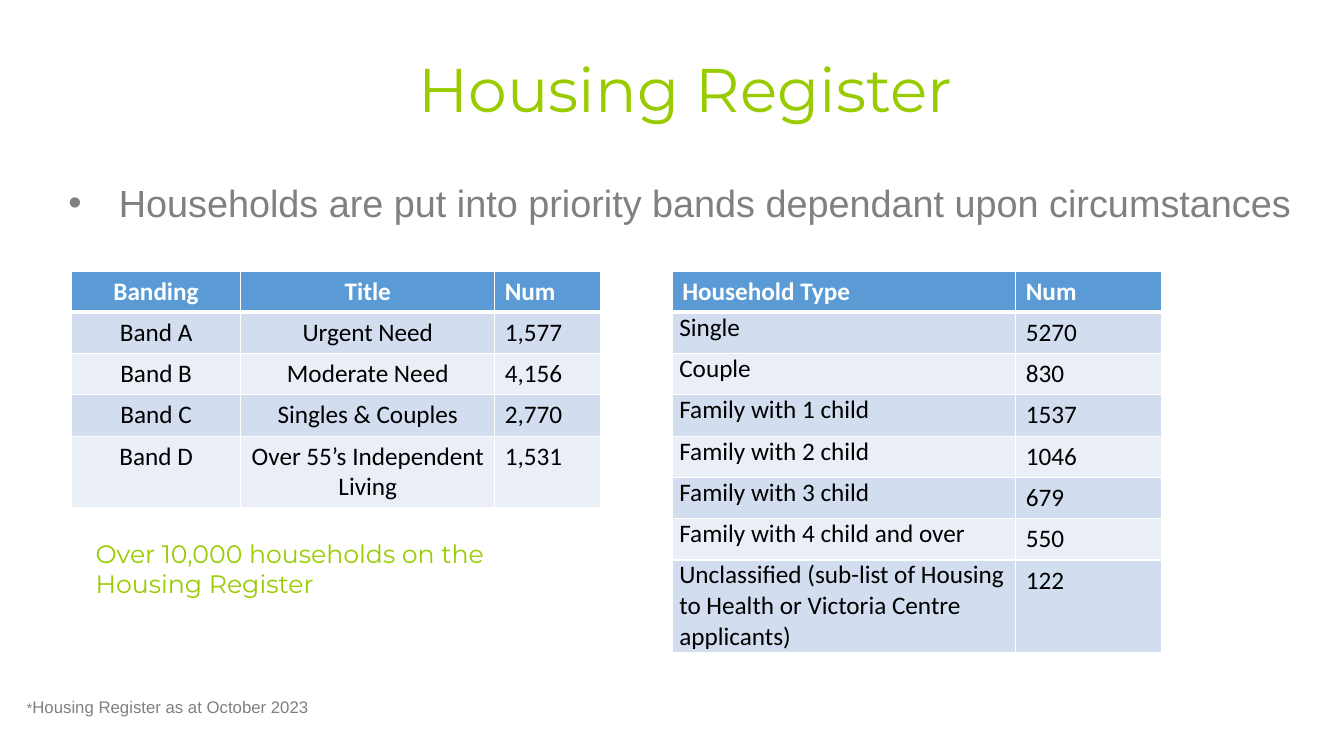
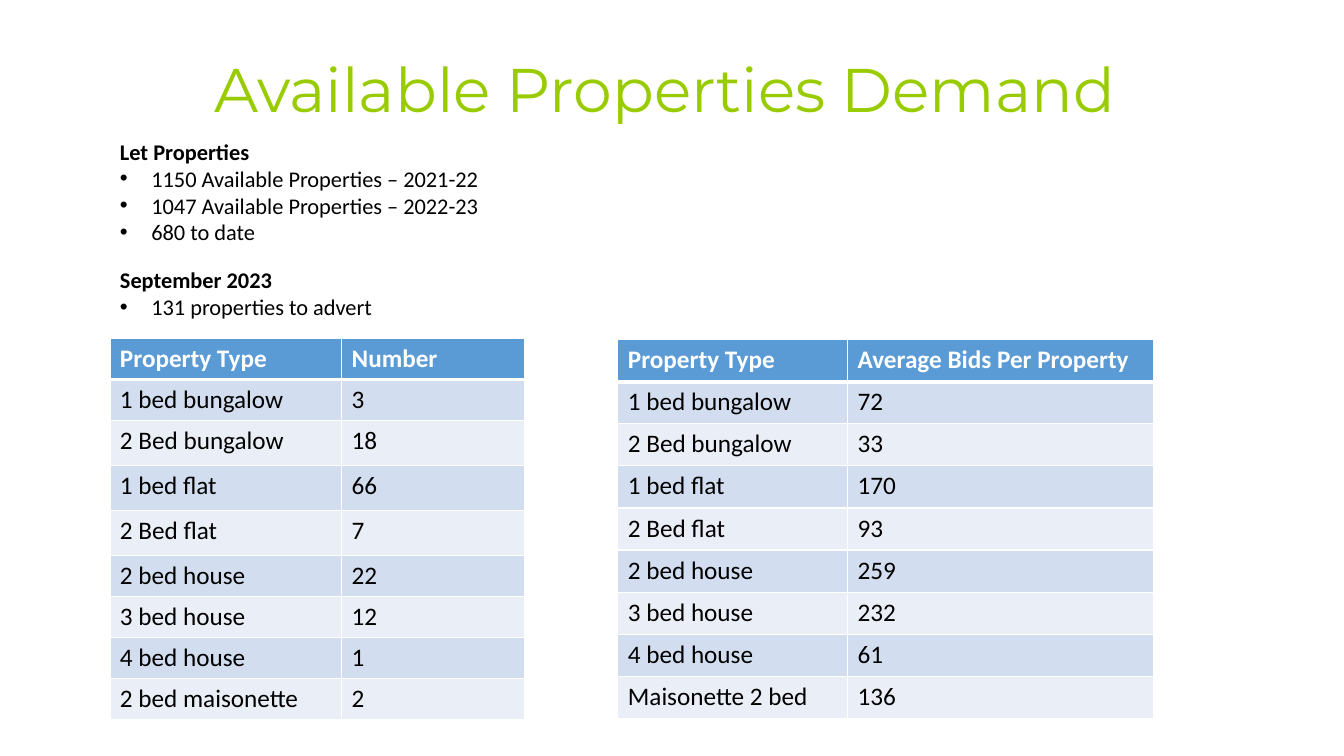
import dataclasses
import typing

import lxml.etree
import pptx
import pptx.dml.color
import pptx.enum.text
import pptx.oxml.ns
import pptx.presentation
import pptx.slide
import pptx.table
import pptx.text.text
import pptx.util

Cm = pptx.util.Cm
Pt = pptx.util.Pt
qn = pptx.oxml.ns.qn
ALIGN = pptx.enum.text.PP_ALIGN
ANCHOR = pptx.enum.text.MSO_ANCHOR
AUTO_SIZE = pptx.enum.text.MSO_AUTO_SIZE


@dataclasses.dataclass(frozen=True)
class TextStyle:
    font: str
    size: float
    color: str
    bold: bool = False


@dataclasses.dataclass(frozen=True)
class Theme:
    title: TextStyle = TextStyle("Montserrat", 44, "99CC00")
    callout: TextStyle = TextStyle("Montserrat", 18, "99CC00")
    lead: TextStyle = TextStyle("Arial", 27, "808080")
    footnote_mark: TextStyle = TextStyle("Arial", 10, "808080")
    footnote: TextStyle = TextStyle("Arial", 12, "808080")
    list_heading: TextStyle = TextStyle("Calibri", 16, "000000", True)
    list_item: TextStyle = TextStyle("Calibri", 16, "000000")
    table_header: TextStyle = TextStyle("Calibri", 18, "FFFFFF", True)
    table_body: TextStyle = TextStyle("Calibri", 18, "000000")
    header_fill: str = "5B9BD5"
    band_fills: tuple[str, str] = ("EAEFF7", "D2DEEF")
    border: str = "FFFFFF"
    thin_border: float = 1
    thick_border: float = 3


THEME = Theme()


class Box(typing.NamedTuple):
    left: float
    top: float
    width: float
    height: float


class Line(typing.NamedTuple):
    runs: list[tuple[str, TextStyle]]
    indent: float = 0


class Column(typing.NamedTuple):
    width: float
    align: ALIGN = ALIGN.LEFT
    tight: bool = False


@dataclasses.dataclass
class DataTable:
    left: float
    top: float
    columns: list[Column]
    row_heights: list[float]
    rows: list[tuple[str, ...]]


def set_values(target: typing.Any, values: dict[str, typing.Any]) -> None:
    for name, value in values.items():
        setattr(target, name, value)


def place(shape: typing.Any, box: Box) -> None:
    set_values(shape, {name: Cm(value) for name, value in box._asdict().items()})


def add_run(paragraph: pptx.text.text._Paragraph, text: str, style: TextStyle) -> None:
    run = paragraph.add_run()
    run.text = text
    set_values(run.font, {"name": style.font, "size": Pt(style.size), "bold": style.bold})
    run.font.color.rgb = pptx.dml.color.RGBColor.from_string(style.color)


def set_bullet(paragraph: pptx.text.text._Paragraph, indent: float) -> None:
    properties = paragraph._p.get_or_add_pPr()
    properties.set("marL", str(Cm(indent)))
    properties.set("indent", str(-Cm(indent)))
    if indent:
        lxml.etree.SubElement(properties, qn("a:buFont"), typeface="Arial")
        lxml.etree.SubElement(properties, qn("a:buChar"), char="•")
    else:
        lxml.etree.SubElement(properties, qn("a:buNone"))


def write_lines(shape: typing.Any, box: Box, lines: list[Line]) -> None:
    place(shape, box)
    frame = shape.text_frame
    set_values(frame, {"word_wrap": True, "auto_size": AUTO_SIZE.NONE,
                       "vertical_anchor": ANCHOR.TOP})
    for index, line in enumerate(lines):
        paragraph = frame.add_paragraph() if index else frame.paragraphs[0]
        set_bullet(paragraph, line.indent)
        set_values(paragraph, {"space_before": Pt(0), "alignment": ALIGN.LEFT})
        for text, style in line.runs:
            add_run(paragraph, text, style)


def add_text(slide: pptx.slide.Slide, box: Box, lines: list[Line]) -> None:
    write_lines(slide.shapes.add_textbox(0, 0, 0, 0), box, lines)


def write_list(slide: pptx.slide.Slide, index: int, box: Box,
               heading: str, items: list[str]) -> None:
    lines = [Line([(heading, THEME.list_heading)])]
    lines += [Line([(item, THEME.list_item)], 0.79) for item in items]
    write_lines(slide.placeholders[index], box, lines)


def add_titled_slide(presentation: pptx.presentation.Presentation, layout: int,
                     title: str, left: float, width: float) -> pptx.slide.Slide:
    slide = presentation.slides.add_slide(presentation.slide_layouts[layout])
    shape = slide.shapes.title
    place(shape, Box(left, 1.32, width, 2.03))
    set_values(shape.text_frame, {"word_wrap": True, "auto_size": AUTO_SIZE.NONE,
                                  "vertical_anchor": ANCHOR.MIDDLE})
    paragraph = shape.text_frame.paragraphs[0]
    set_values(paragraph, {"alignment": ALIGN.CENTER, "line_spacing": 0.9})
    add_run(paragraph, title, THEME.title)
    return slide


def set_borders(cell: pptx.table._Cell, row: int) -> None:
    widths = {
        "a:lnL": THEME.thin_border,
        "a:lnR": THEME.thin_border,
        "a:lnT": THEME.thick_border if row == 1 else THEME.thin_border,
        "a:lnB": THEME.thick_border if row == 0 else THEME.thin_border,
    }
    properties = cell._tc.get_or_add_tcPr()
    for tag, width in widths.items():
        border = lxml.etree.SubElement(properties, qn(tag), w=str(Pt(width)))
        fill = lxml.etree.SubElement(border, qn("a:solidFill"))
        lxml.etree.SubElement(fill, qn("a:srgbClr"), val=THEME.border)


def format_cell(cell: pptx.table._Cell, row: int, column: Column, text: str) -> None:
    set_borders(cell, row)
    fill = THEME.band_fills[row % 2] if row else THEME.header_fill
    cell.fill.solid()
    cell.fill.fore_color.rgb = pptx.dml.color.RGBColor.from_string(fill)
    if column.tight and row:
        set_values(cell, {"margin_left": Cm(0.18), "margin_right": Cm(0.18),
                          "margin_top": 0, "margin_bottom": 0})
    paragraph = cell.text_frame.paragraphs[0]
    paragraph.alignment = column.align
    add_run(paragraph, text, THEME.table_body if row else THEME.table_header)


def add_data_table(slide: pptx.slide.Slide, data: DataTable) -> None:
    width = sum(column.width for column in data.columns)
    box = Box(data.left, data.top, width, sum(data.row_heights))
    table = slide.shapes.add_table(len(data.rows), len(data.columns), *map(Cm, box)).table
    for index, column in enumerate(data.columns):
        table.columns[index].width = Cm(column.width)
    for row, (height, texts) in enumerate(zip(data.row_heights, data.rows)):
        table.rows[row].height = Cm(height)
        for index, (column, text) in enumerate(zip(data.columns, texts)):
            format_cell(table.cell(row, index), row, column, text)


def build_register(presentation: pptx.presentation.Presentation) -> None:
    slide = add_titled_slide(presentation, 1, "Housing Register ", 6.15, 22.66)
    lead = "Households are put into priority bands dependant upon circumstances"
    write_lines(slide.placeholders[1], Box(1.47, 4.39, 31.72, 1.42),
                [Line([(lead, THEME.lead)], 1.27)])
    add_text(slide, Box(0.43, 17.42, 12.7, 0.76),
             [Line([("*", THEME.footnote_mark),
                    ("Housing Register as at October 2023", THEME.footnote)])])
    add_data_table(slide, DataTable(
        1.8, 6.83,
        [Column(4.27, ALIGN.CENTER), Column(6.4, ALIGN.CENTER), Column(2.67)],
        [1.04] * 4 + [1.75],
        [("Banding", "Title", "Num"),
         ("Band A", "Urgent Need", "1,577"),
         ("Band B", "Moderate Need", "4,156"),
         ("Band C", "Singles & Couples", "2,770"),
         ("Band D", "Over 55’s Independent Living", "1,531")]))
    add_data_table(slide, DataTable(
        16.94, 6.83, [Column(8.66, tight=True), Column(3.68)],
        [1.04] * 7 + [2.27],
        [("Household Type", "Num"),
         ("Single", "5270"),
         ("Couple", "830"),
         ("Family with 1 child", "1537"),
         ("Family with 2 child", "1046"),
         ("Family with 3 child", "679"),
         ("Family with 4 child and over", "550"),
         ("Unclassified (sub-list of Housing to Health or Victoria Centre applicants)",
          "122")]))
    add_text(slide, Box(2.16, 13.44, 12.34, 1.8),
             [Line([("Over 10,000 households on the Housing Register", THEME.callout)])])


def build_demand(presentation: pptx.presentation.Presentation) -> None:
    slide = add_titled_slide(presentation, 3, "Available Properties Demand", 3.61, 26.31)
    write_list(slide, 1, Box(2.77, 3.35, 12.01, 3.76), "Let Properties",
               ["1150 Available Properties – 2021-22",
                "1047 Available Properties – 2022-23",
                "680 to date"])
    write_list(slide, 2, Box(2.77, 6.58, 12.01, 2.39), "September 2023",
               ["131 properties to advert"])
    add_data_table(slide, DataTable(
        15.57, 8.56, [Column(5.79), Column(7.72)], [1.06] * 9,
        [("Property Type", "Average Bids Per Property"),
         ("1 bed bungalow", "72"),
         ("2 Bed bungalow", "33"),
         ("1 bed flat", "170"),
         ("2 Bed flat", "93"),
         ("2 bed house", "259"),
         ("3 bed house", "232"),
         ("4 bed house", "61"),
         ("Maisonette 2 bed", "136")]))
    add_data_table(slide, DataTable(
        2.77, 8.53, [Column(5.84), Column(4.6)],
        [1.02] * 2 + [1.14] * 3 + [1.02] * 4,
        [("Property Type", "Number"),
         ("1 bed bungalow", "3"),
         ("2 Bed bungalow", "18"),
         ("1 bed flat", "66"),
         ("2 Bed flat", "7"),
         ("2 bed house", "22"),
         ("3 bed house", "12"),
         ("4 bed house", "1"),
         ("2 bed maisonette", "2")]))


def main() -> None:
    presentation = pptx.Presentation()
    set_values(presentation, {"slide_width": Cm(33.87), "slide_height": Cm(19.05)})
    build_register(presentation)
    build_demand(presentation)
    presentation.save("out.pptx")


if __name__ == "__main__":
    main()
